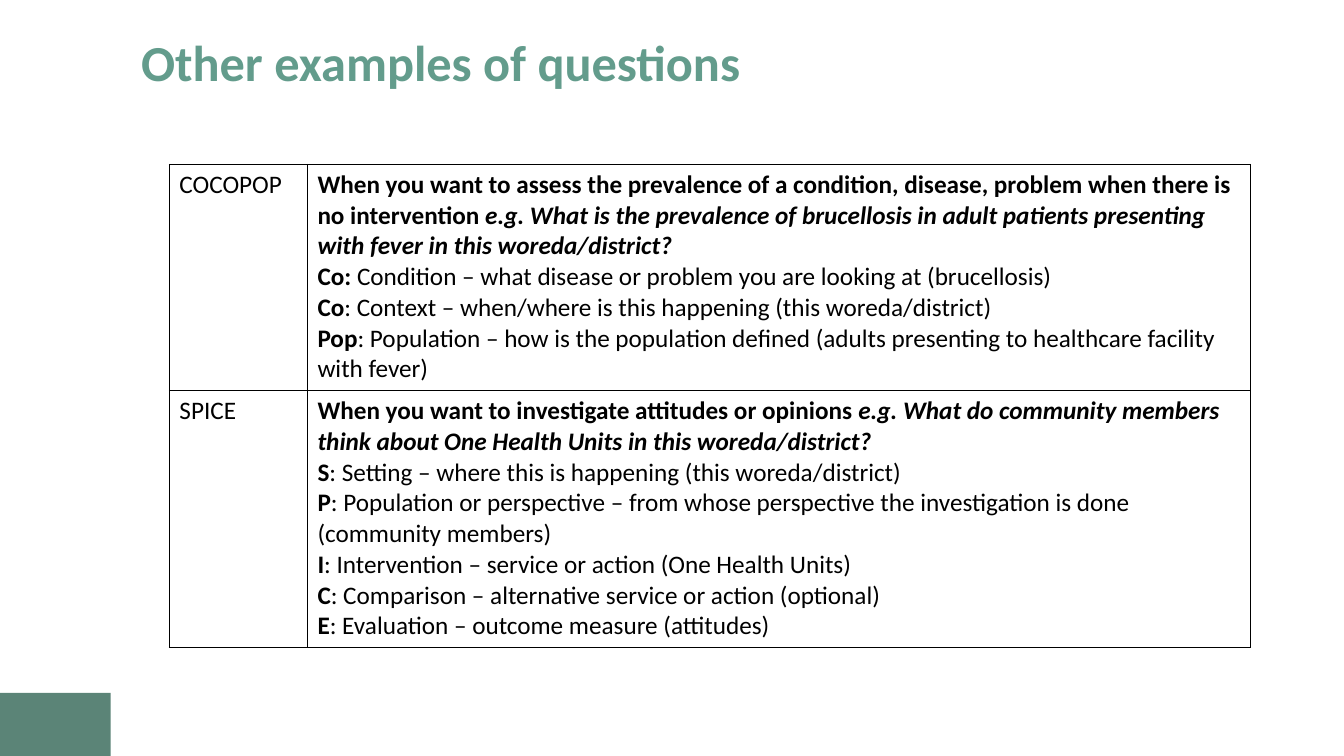
from dataclasses import dataclass

from lxml import etree
from pptx import Presentation
from pptx.dml.color import RGBColor
from pptx.enum import shapes, text
from pptx.oxml import ns
from pptx.util import Pt


@dataclass(frozen=True)
class Theme:
    font: str = "Calibri"
    title_size: int = 36
    body_size: int = 18
    title: str = "639C8C"
    accent: str = "5B8477"
    ink: str = "000000"
    paper: str = "FFFFFF"
    border: int = 1


@dataclass(frozen=True)
class Box:
    left: float
    top: float
    width: float
    height: float

    def lengths(self):
        return [Pt(n) for n in (self.left, self.top, self.width, self.height)]


THEME = Theme()
PAGE = Box(0, 0, 960, 540)
LABEL_WIDTH = 98.6
ROW_HEIGHTS = (161.5, 183.5)

FRAMEWORKS = [
    (
        "COCOPOP",
        "When you want to assess the prevalence of a condition, disease, problem when there is no intervention ",
        "e.g. What is the prevalence of brucellosis in adult patients presenting with fever in this woreda/district?",
        [
            ("Co: ", "Condition – what disease or problem you are looking at (brucellosis)"),
            ("Co", ": Context – when/where is this happening (this woreda/district)"),
            ("Pop", ": Population – how is the population defined (adults presenting to healthcare facility with fever)"),
        ],
    ),
    (
        "SPICE",
        "When you want to investigate attitudes or opinions ",
        "e.g. What do community members think about One Health Units in this woreda/district?",
        [
            ("S", ": Setting – where this is happening (this woreda/district)"),
            ("P", ": Population or perspective – from whose perspective the investigation is done (community members)"),
            ("I", ": Intervention – service or action (One Health Units)"),
            ("C", ": Comparison – alternative service or action (optional)"),
            ("E", ": Evaluation – outcome measure (attitudes)"),
        ],
    ),
]


def style(span, size, color, bold=False, italic=False):
    span.font.name = THEME.font
    span.font.size = Pt(size)
    span.font.color.rgb = RGBColor.from_string(color)
    span.font.bold = bold
    span.font.italic = italic


def add_span(para, words, bold=False, italic=False):
    span = para.add_run()
    span.text = words
    style(span, THEME.body_size, THEME.ink, bold, italic)


def add_corner_block(page, box):
    block = page.shapes.add_shape(shapes.MSO_SHAPE.RECTANGLE, *box.lengths())
    block.shadow.inherit = False
    block.fill.solid()
    block.fill.fore_color.rgb = RGBColor.from_string(THEME.accent)
    block.line.fill.background()


def set_title(page, box, words):
    title = page.shapes.title
    title.left, title.top, title.width, title.height = box.lengths()
    frame = title.text_frame
    frame.text = words
    frame.word_wrap = True
    frame.auto_size = text.MSO_AUTO_SIZE.NONE
    frame.vertical_anchor = text.MSO_ANCHOR.MIDDLE
    para = frame.paragraphs[0]
    para.alignment = text.PP_ALIGN.LEFT
    para.line_spacing = 0.9
    style(para.runs[0], THEME.title_size, THEME.title, bold=True)


def format_cell(cell):
    cell.fill.solid()
    cell.fill.fore_color.rgb = RGBColor.from_string(THEME.paper)
    properties = cell._tc.get_or_add_tcPr()
    for position, side in enumerate(("lnL", "lnR", "lnT", "lnB")):
        line = etree.Element(ns.qn(f"a:{side}"), w=str(Pt(THEME.border)))
        fill = etree.SubElement(line, ns.qn("a:solidFill"))
        etree.SubElement(fill, ns.qn("a:srgbClr"), val=THEME.ink)
        properties.insert(position, line)


def fill_description(frame, purpose, example, parts):
    opening = frame.paragraphs[0]
    add_span(opening, purpose, bold=True)
    add_span(opening, example, bold=True, italic=True)
    for letters, meaning in parts:
        para = frame.add_paragraph()
        add_span(para, letters, bold=True)
        add_span(para, meaning)


def add_framework_table(page, box):
    table = page.shapes.add_table(len(FRAMEWORKS), 2, *box.lengths()).table
    table.first_row = False
    table.horz_banding = False
    table.columns[0].width = Pt(LABEL_WIDTH)
    table.columns[1].width = Pt(box.width - LABEL_WIDTH)
    for row, height, framework in zip(table.rows, ROW_HEIGHTS, FRAMEWORKS):
        row.height = Pt(height)
        name, purpose, example, parts = framework
        label, description = row.cells
        add_span(label.text_frame.paragraphs[0], name)
        fill_description(description.text_frame, purpose, example, parts)
        for cell in (label, description):
            format_cell(cell)


def build_question_page(deck, box):
    page = deck.slides.add_slide(deck.slide_layouts[5])
    add_corner_block(page, Box(box.left, box.height - 45, 79, 45))
    set_title(page, Box(box.left + 93.6, box.top + 21, 800, 51), "Other examples of questions")
    add_framework_table(page, Box(box.left + 121, box.top + 117.4, 772.5, sum(ROW_HEIGHTS)))


def main():
    deck = Presentation()
    deck.slide_width = Pt(PAGE.width)
    deck.slide_height = Pt(PAGE.height)
    build_question_page(deck, PAGE)
    deck.save("out.pptx")


if __name__ == "__main__":
    main()
